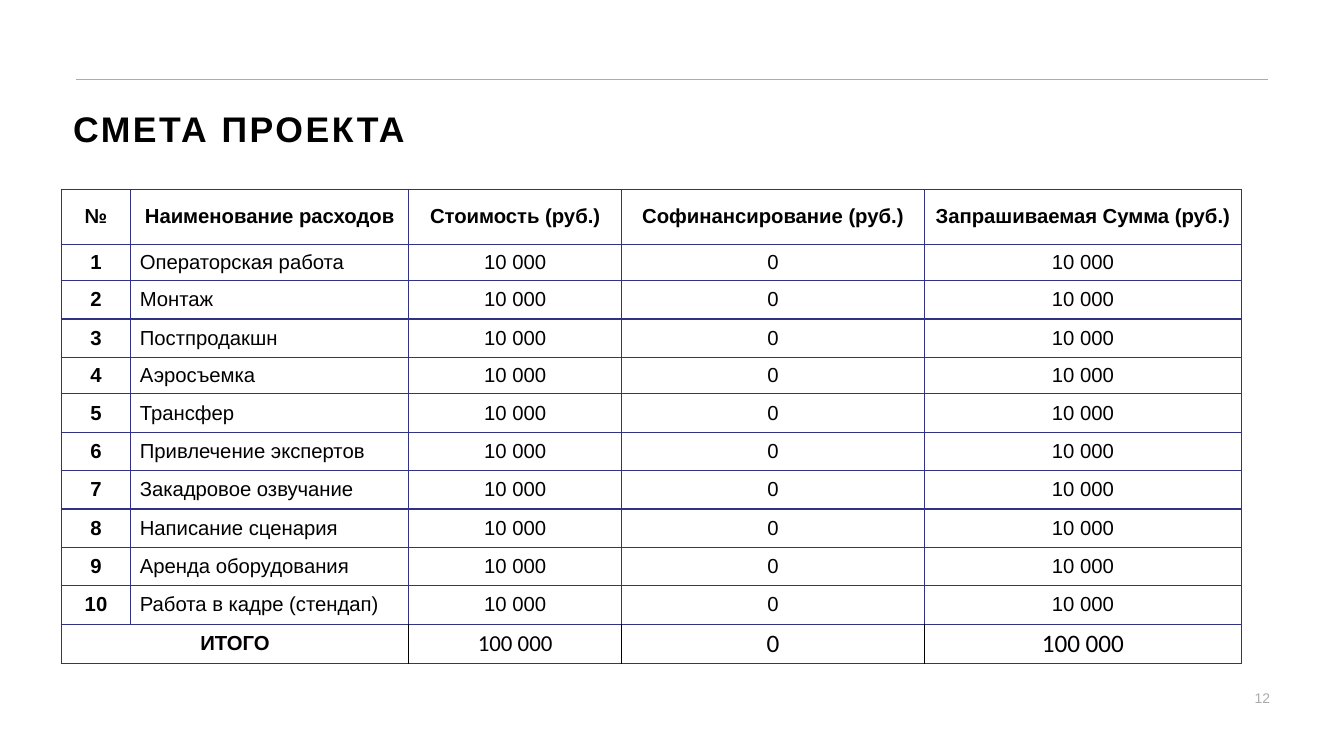
from dataclasses import dataclass

from lxml.etree import SubElement
from pptx import Presentation
from pptx.dml.color import RGBColor
from pptx.enum.shapes import MSO_CONNECTOR
from pptx.enum.text import MSO_ANCHOR, MSO_AUTO_SIZE, PP_ALIGN
from pptx.oxml import parse_xml
from pptx.oxml.ns import nsdecls, qn
from pptx.util import Pt

PX = 9144


@dataclass(frozen=True)
class Theme:
    ink: str = "000000"
    muted: str = "AFABAB"
    border: str = "313283"
    font: str = "Arial"
    total_font: str = "Calibri"
    title: float = 28
    body: float = 16
    total: float = 18
    grand_total: float = 19.8
    number: float = 11


THEME = Theme()

HEADINGS = [
    "№",
    "Наименование расходов",
    "Стоимость (руб.)",
    "Софинансирование (руб.)",
    "Запрашиваемая Сумма (руб.)",
]
EXPENSES = [
    "Операторская работа",
    "Монтаж",
    "Постпродакшн",
    "Аэросъемка",
    "Трансфер",
    "Привлечение экспертов",
    "Закадровое озвучание",
    "Написание сценария",
    "Аренда оборудования",
    "Работа в кадре (стендап)",
]
AMOUNTS = ["10 000", "0", "10 000"]
TOTALS = ["100 000", "0", "100 000"]
COLUMN_WIDTHS = [76, 304, 233, 331, 347]
ROW_HEIGHTS = [60, 40, 42, 42, 40] + [42] * 6 + [41]


def emu(*lengths):
    return [length * PX for length in lengths]


def write(frame, text, size, align=PP_ALIGN.CENTER, bold=False,
          font=THEME.font, color=THEME.ink):
    para = frame.paragraphs[0]
    para.alignment = align
    span = para.add_run()
    span.text = text
    span.font.name = font
    span.font.size = Pt(size)
    span.font.bold = bold
    span.font.color.rgb = RGBColor.from_string(color)
    return span


def add_rule(page, box):
    left, top, width = emu(*box)
    rule = page.shapes.add_connector(
        MSO_CONNECTOR.STRAIGHT, left, top, left + width, top)
    rule.line.color.rgb = RGBColor.from_string(THEME.muted)
    rule.line.width = Pt(0.5)
    SubElement(rule._element.spPr, qn("a:effectLst"))


def add_title(page, box):
    title = page.shapes.title
    title.left, title.top, title.width, title.height = emu(*box)
    frame = title.text_frame
    frame.margin_left = frame.margin_right = 0
    frame.margin_top = frame.margin_bottom = 0
    frame.word_wrap = True
    frame.vertical_anchor = MSO_ANCHOR.TOP
    frame.auto_size = MSO_AUTO_SIZE.SHAPE_TO_FIT_TEXT
    span = write(frame, "СМЕТА ПРОЕКТА", THEME.title, PP_ALIGN.LEFT, True)
    span.font._element.set("spc", "200")


def add_page_number(page, box):
    frame = page.shapes.add_textbox(*emu(*box)).text_frame
    frame.word_wrap = True
    frame.vertical_anchor = MSO_ANCHOR.MIDDLE
    write(frame, "12", THEME.number, PP_ALIGN.RIGHT, color=THEME.muted)


def set_borders(cell, left, right):
    sides = {"L": left, "R": right, "T": THEME.border, "B": THEME.border}
    properties = cell._tc.get_or_add_tcPr()
    for position, (side, color) in enumerate(sides.items()):
        properties.insert(position, parse_xml(
            f'<a:ln{side} w="{Pt(1)}" {nsdecls("a")}><a:solidFill>'
            f'<a:srgbClr val="{color}"/></a:solidFill></a:ln{side}>'))


def add_budget(page, box):
    rows = [HEADINGS]
    rows += [[str(number), name, *AMOUNTS]
             for number, name in enumerate(EXPENSES, 1)]
    rows.append(["ИТОГО", "", *TOTALS])
    last_row, last_column = len(rows) - 1, len(HEADINGS) - 1
    budget = page.shapes.add_table(len(rows), len(HEADINGS), *emu(*box)).table
    budget.first_row = budget.horz_banding = False
    for column, width in zip(budget.columns, emu(*COLUMN_WIDTHS)):
        column.width = width
    for row, height in zip(budget.rows, emu(*ROW_HEIGHTS)):
        row.height = height
    budget.cell(last_row, 0).merge(budget.cell(last_row, 1))

    for r, row in enumerate(rows):
        for c, text in enumerate(row):
            cell = budget.cell(r, c)
            cell.fill.background()
            cell.vertical_anchor = MSO_ANCHOR.MIDDLE
            inner = THEME.ink if r == last_row else THEME.border
            set_borders(cell,
                        inner if c else THEME.border,
                        inner if c < last_column else THEME.border)
            if not text:
                continue
            if r == last_row and c:
                size = THEME.total if c == 2 else THEME.grand_total
                write(cell.text_frame, text, size, font=THEME.total_font)
            else:
                is_name = c == 1 and r > 0
                align = PP_ALIGN.LEFT if is_name else PP_ALIGN.CENTER
                write(cell.text_frame, text, THEME.body, align,
                      bold=r == 0 or c == 0)


def main():
    deck = Presentation()
    deck.slide_width, deck.slide_height = emu(1470, 827)
    page = deck.slides.add_slide(deck.slide_layouts.get_by_name("Title Only"))
    add_rule(page, (83, 87, 1304))
    add_page_number(page, (1068, 751, 331, 25))
    add_title(page, (80, 117, 968, 47))
    add_budget(page, (67, 207, sum(COLUMN_WIDTHS), sum(ROW_HEIGHTS)))
    deck.save("out.pptx")


if __name__ == "__main__":
    main()
